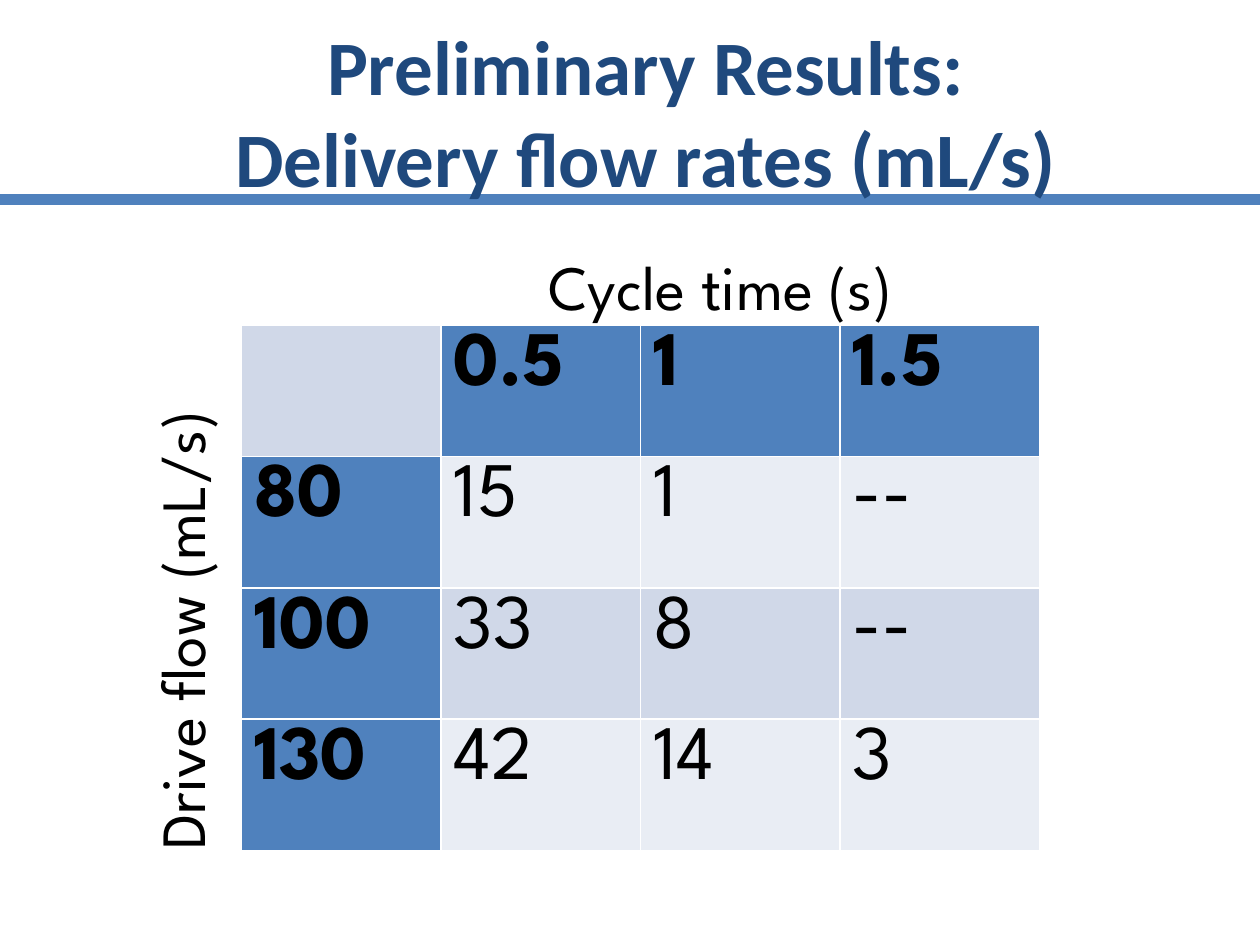
from lxml.etree import SubElement
from pptx import Presentation
from pptx.dml.color import RGBColor
from pptx.enum.shapes import MSO_CONNECTOR
from pptx.enum.text import MSO_ANCHOR, MSO_AUTO_SIZE, PP_ALIGN
from pptx.oxml.ns import qn
from pptx.util import Cm, Pt

BLUE = RGBColor(0x4F, 0x81, 0xBD)
NAVY = RGBColor(0x1F, 0x49, 0x7D)
BLACK = RGBColor(0, 0, 0)
WHITE = RGBColor(0xFF, 0xFF, 0xFF)
BANDS = RGBColor(0xD0, 0xD8, 0xE8), RGBColor(0xE9, 0xED, 0xF4)

FLOW_RATES = [
    ["", "0.5", "1", "1.5"],
    ["80", "15", "1", "--"],
    ["100", "33", "8", "--"],
    ["130", "42", "14", "3"],
]


class ResultsSlide:
    heading_font = "Calibri"
    body_font = "League Spartan"
    large = Pt(44)
    label_size = Pt(36)

    def __init__(self, deck):
        self.slide = deck.slides.add_slide(deck.slide_layouts[6])
        self.shapes = self.slide.shapes

    def style(self, paragraph, name, size, color, bold=False):
        font = paragraph.font
        font.name, font.size, font.bold = name, size, bold
        font.color.rgb = color

    def rule(self, y, width):
        rule = self.shapes.add_connector(MSO_CONNECTOR.STRAIGHT, 0, y, width, y)
        rule.line.color.rgb = BLUE
        rule.line.width = Pt(6)
        SubElement(rule._element.spPr, qn("a:effectLst"))

    def title(self, text, left, top, width, height):
        frame = self.shapes.add_textbox(left, top, width, height).text_frame
        frame.word_wrap = True
        frame.vertical_anchor = MSO_ANCHOR.MIDDLE
        heading = frame.paragraphs[0]
        heading.text = text
        heading.alignment = PP_ALIGN.CENTER
        self.style(heading, self.heading_font, self.large, NAVY, True)

    def axis_label(self, text, left, top, width, height, rotation=0):
        label = self.shapes.add_textbox(left, top, width, height)
        label.rotation = rotation
        frame = label.text_frame
        frame.word_wrap = False
        frame.auto_size = MSO_AUTO_SIZE.SHAPE_TO_FIT_TEXT
        frame.text = text
        self.style(frame.paragraphs[0], self.body_font, self.label_size, BLACK)

    def border(self, cell):
        properties = cell._tc.get_or_add_tcPr()
        for position, side in enumerate(("lnL", "lnR", "lnT", "lnB")):
            edge = SubElement(properties, qn(f"a:{side}"), w=str(Pt(1)))
            fill = SubElement(edge, qn("a:solidFill"))
            SubElement(fill, qn("a:srgbClr"), val=str(WHITE))
            properties.insert(position, edge)

    def table(self, rows, left, top, width, height):
        grid = self.shapes.add_table(
            len(rows), len(rows[0]), left, top, width, height).table
        grid.first_row = grid.horz_banding = False
        for r, values in enumerate(rows):
            for c, value in enumerate(values):
                cell = grid.cell(r, c)
                is_header = (r == 0) != (c == 0)
                cell.fill.solid()
                cell.fill.fore_color.rgb = BLUE if is_header else BANDS[r % 2]
                self.border(cell)
                if value:
                    cell.text = value
                    self.style(cell.text_frame.paragraphs[0], self.body_font,
                               self.large, BLACK, is_header)


def main():
    deck = Presentation()
    deck.slide_width, deck.slide_height = Cm(25.4), Cm(19.05)
    results = ResultsSlide(deck)
    results.rule(Cm(4.02), deck.slide_width)
    results.title("Preliminary Results:\vDelivery flow rates (mL/s)",
                  Cm(1.27), Cm(0.64), Cm(23.5), Cm(3.18))
    results.table(FLOW_RATES, Cm(4.87), Cm(6.56), Cm(16.09), Cm(10.58))
    results.axis_label("Cycle time (s)", Cm(10.8), Cm(4.87), Cm(7.8), Cm(1.8))
    results.axis_label("Drive flow (mL/s)",
                       Cm(-1.25), Cm(11.58), Cm(9.8), Cm(1.8), 270)
    deck.save("out.pptx")


if __name__ == "__main__":
    main()
